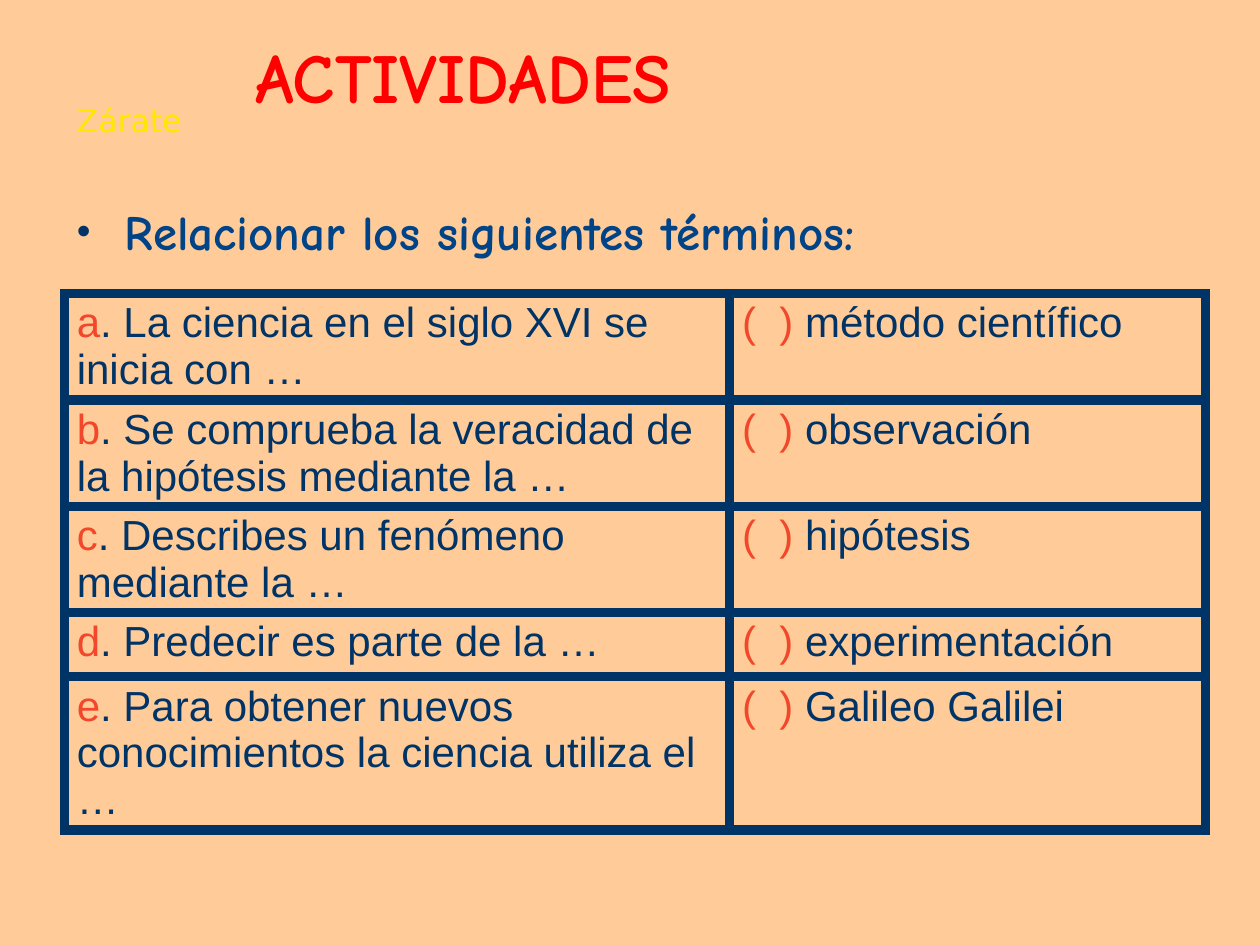
from lxml import etree
from pptx import Presentation
from pptx.dml.color import RGBColor
from pptx.enum.text import MSO_ANCHOR, MSO_AUTO_SIZE, PP_ALIGN
from pptx.oxml.ns import qn
from pptx.util import Inches, Pt

LEFT, CENTER = PP_ALIGN.LEFT, PP_ALIGN.CENTER
TOP, BOTTOM = MSO_ANCHOR.TOP, MSO_ANCHOR.BOTTOM
NO_AUTOFIT = MSO_AUTO_SIZE.NONE

COLORS = {
    "background": "FFCC99",
    "title": "FF0000",
    "instruction": "004386",
    "navy": "003366",
    "marker": "F2472A",
    "signature": "FFE701",
}
COLUMN_WIDTHS = (5.28, 3.78)
ROW_HEIGHTS = (0.55, 0.54, 0.52, 0.51, 0.57)
PAIRS = (
    ("La ciencia en el siglo XVI se inicia con …", "método científico"),
    ("Se comprueba la veracidad de la hipótesis mediante la …", "observación"),
    ("Describes un fenómeno mediante la …", "hipótesis"),
    ("Predecir es parte de la …", "experimentación"),
    ("Para obtener nuevos conocimientos la ciencia utiliza el …", "Galileo Galilei"),
)


def add_run(paragraph, text, font_name, size, color, bold=False):
    run = paragraph.add_run()
    run.text = text
    run.font.name = font_name
    run.font.size = Pt(size)
    run.font.bold = bold
    run.font.color.rgb = RGBColor.from_string(COLORS[color])


def place(shape, box):
    shape.left, shape.top, shape.width, shape.height = (Inches(value) for value in box)


def prepare_text(shape, anchor, alignment, wrap=True):
    frame = shape.text_frame
    frame.word_wrap = wrap
    frame.auto_size = NO_AUTOFIT
    frame.vertical_anchor = anchor
    paragraph = frame.paragraphs[0]
    paragraph.alignment = alignment
    paragraph.space_before = Pt(0)
    return paragraph


def add_signature(slide, box):
    shape = slide.shapes.add_textbox(*(Inches(value) for value in box))
    paragraph = prepare_text(shape, TOP, CENTER, wrap=False)
    add_run(paragraph, "Zárate", "DejaVu Sans", 18, "signature")


def fill_title(slide, box):
    shape = slide.shapes.title
    place(shape, box)
    paragraph = prepare_text(shape, BOTTOM, LEFT)
    paragraph.line_spacing = 0.9
    add_run(paragraph, "ACTIVIDADES", "Comic Neue", 40, "title", bold=True)


def add_bullet(paragraph, color, indent):
    properties = paragraph._p.get_or_add_pPr()
    properties.set("marL", str(Inches(indent)))
    properties.set("indent", str(-Inches(indent)))
    bullet_color = etree.SubElement(properties, qn("a:buClr"))
    etree.SubElement(bullet_color, qn("a:srgbClr"), val=COLORS[color])
    etree.SubElement(properties, qn("a:buSzPct"), val="80000")
    etree.SubElement(properties, qn("a:buFont"), typeface="Arial")
    etree.SubElement(properties, qn("a:buChar"), char="•")


def fill_instruction(slide, box):
    shape = slide.placeholders[1]
    place(shape, box)
    paragraph = prepare_text(shape, TOP, LEFT)
    add_bullet(paragraph, "navy", 0.38)
    add_run(paragraph, "Relacionar los siguientes términos:", "Comic Neue", 28,
            "instruction", bold=True)


def add_borders(cell, color, width):
    properties = cell._tc.get_or_add_tcPr()
    for side in ("L", "R", "T", "B"):
        line = etree.SubElement(properties, qn(f"a:ln{side}"), w=str(Pt(width)))
        fill = etree.SubElement(line, qn("a:solidFill"))
        etree.SubElement(fill, qn("a:srgbClr"), val=COLORS[color])


def fill_cell(cell, marker, text):
    add_borders(cell, "navy", 6)
    cell.fill.background()
    paragraph = cell.text_frame.paragraphs[0]
    add_run(paragraph, marker, "Arial", 24, "marker")
    add_run(paragraph, text, "Arial", 24, "navy")


def add_matching_table(slide, left, top):
    frame = slide.shapes.add_table(
        len(PAIRS), len(COLUMN_WIDTHS), Inches(left), Inches(top),
        Inches(sum(COLUMN_WIDTHS)), Inches(sum(ROW_HEIGHTS)))
    table = frame.table
    table.first_row = False
    table.horz_banding = False
    for column, width in zip(table.columns, COLUMN_WIDTHS):
        column.width = Inches(width)
    for row, height, letter, (statement, term) in zip(table.rows, ROW_HEIGHTS, "abcde", PAIRS):
        row.height = Inches(height)
        fill_cell(row.cells[0], letter, f". {statement}")
        fill_cell(row.cells[1], "(  )", f" {term}")


def main():
    presentation = Presentation()
    presentation.slide_width = Inches(10)
    presentation.slide_height = Inches(7.5)
    slide = presentation.slides.add_slide(presentation.slide_layouts[1])
    slide.background.fill.solid()
    slide.background.fill.fore_color.rgb = RGBColor.from_string(COLORS["background"])
    add_signature(slide, (0.43, 0.75, 1.19, 0.59))
    fill_title(slide, (1.93, 0.3, 7.57, 0.69))
    fill_instruction(slide, (0.51, 1.55, 8.99, 0.74))
    add_matching_table(slide, 0.51, 2.33)
    presentation.save("out.pptx")


if __name__ == "__main__":
    main()
